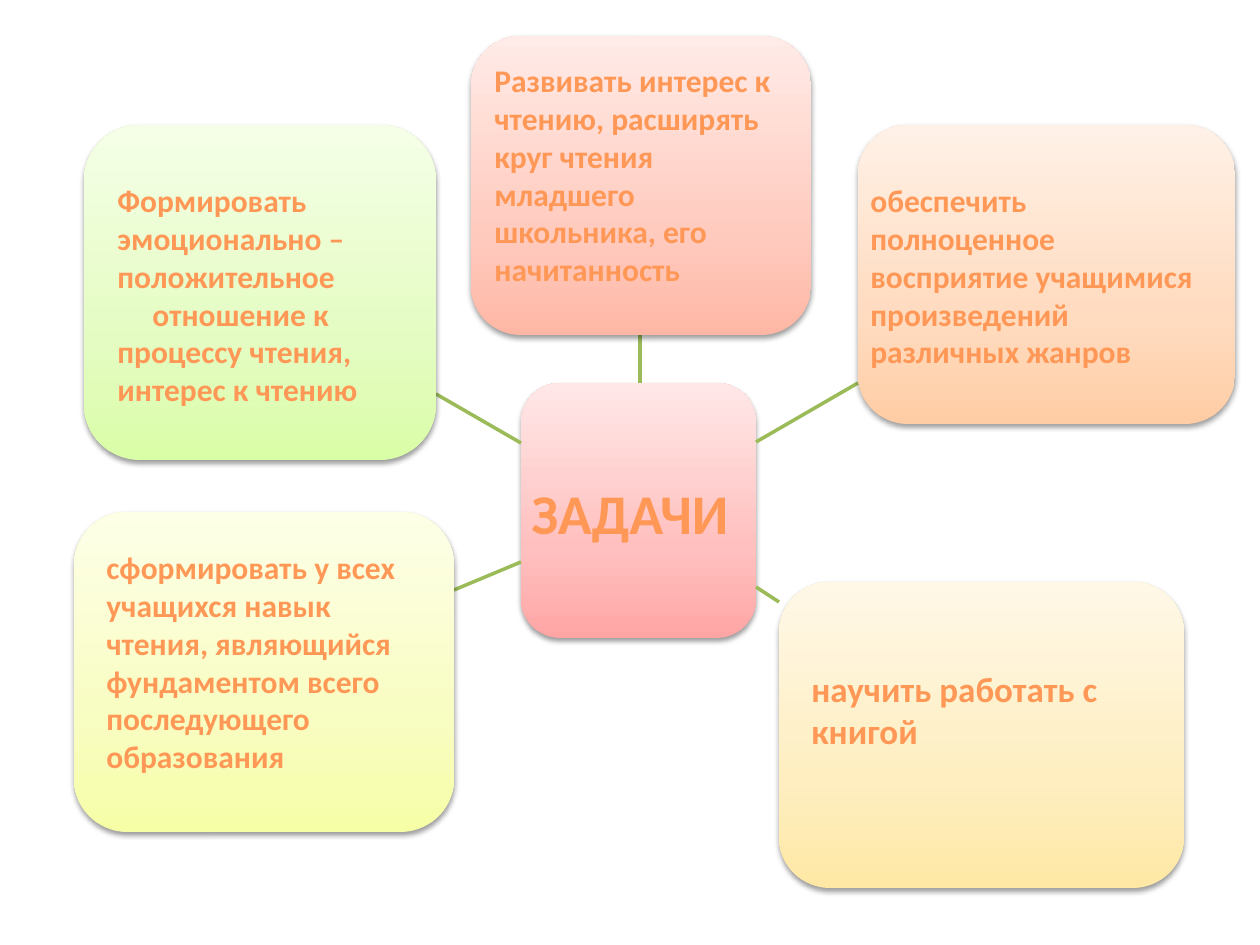
from copy import deepcopy

from lxml.etree import SubElement
from pptx import Presentation
from pptx.dml.color import RGBColor
from pptx.enum.shapes import MSO_CONNECTOR, MSO_SHAPE
from pptx.enum.text import MSO_ANCHOR, MSO_AUTO_SIZE, PP_ALIGN
from pptx.oxml.ns import qn
from pptx.util import Pt

SCALE = 914400 / 126
FONT = "Calibri"
ORANGE = RGBColor(0xFF, 0x98, 0x56)
GREEN = RGBColor(0x9B, 0xBB, 0x59)
ROSE = [RGBColor(0xFF, 0xA6, 0xA5), RGBColor(0xFF, 0xC0, 0xBF), RGBColor(0xFF, 0xE7, 0xE7)]
CORAL = [RGBColor(0xFF, 0xB7, 0xA5), RGBColor(0xFF, 0xCB, 0xBF), RGBColor(0xFF, 0xEB, 0xE7)]
PEACH = [RGBColor(0xFF, 0xCD, 0xA5), RGBColor(0xFF, 0xDB, 0xBF), RGBColor(0xFF, 0xF1, 0xE7)]
AMBER = [RGBColor(0xFF, 0xE8, 0xA5), RGBColor(0xFE, 0xEE, 0xC0), RGBColor(0xFF, 0xF8, 0xE7)]
LEMON = [RGBColor(0xF6, 0xFE, 0xA6), RGBColor(0xF8, 0xFD, 0xC1), RGBColor(0xFD, 0xFF, 0xE7)]
LIME = [RGBColor(0xDA, 0xFD, 0xA7), RGBColor(0xE4, 0xFC, 0xC2), RGBColor(0xF5, 0xFF, 0xE7)]

CENTER = (521, 383, 235, 255)
GOALS = [
    (CORAL, (471, 36, 340, 299), (640, 383, 640, 335), (482, 55, 317, 271), 18,
     ["Развивать интерес к чтению, расширять круг чтения младшего школьника, его начитанность"]),
    (PEACH, (858, 125, 377, 299), (756, 442, 858, 383), (858, 175, 367, 204), 18,
     ["обеспечить полноценное восприятие учащимися произведений различных жанров"]),
    (AMBER, (779, 582, 405, 306), (756, 587, 779, 602), (799, 661, 367, 97), 20,
     ["научить работать с книгой"]),
    (LEMON, (74, 512, 380, 320), (521, 562, 454, 590), (94, 542, 328, 242), 18,
     ["сформировать у всех учащихся навык чтения, являющийся фундаментом всего "
      "последующего образования"]),
    (LIME, (84, 125, 352, 335), (521, 443, 436, 394), (105, 175, 317, 242), 18,
     ["Формировать эмоционально –положительное",
      "отношение к процессу чтения, интерес к чтению"]),
]


def px(*lengths):
    return [round(length * SCALE) for length in lengths]


class MindMap:
    """Draws the cards, links and texts of a mind map on one slide."""

    def __init__(self, deck):
        self.page = deck.slides.add_slide(deck.slide_layouts[5])
        self.shapes = self.page.shapes

    def card(self, place, colors):
        card = self.shapes.add_shape(MSO_SHAPE.ROUNDED_RECTANGLE, *px(*place))
        card.line.fill.background()
        card.fill.gradient()
        card.fill.gradient_angle = 90
        first = card._element.spPr.find(".//" + qn("a:gs"))
        first.addnext(deepcopy(first))
        for stop, position, color in zip(card.fill.gradient_stops, (0, 0.35, 1), colors):
            stop.position = position
            stop.color.rgb = color
        card.shadow.inherit = False
        effects = card._element.spPr.find(qn("a:effectLst"))
        shadow = SubElement(effects, qn("a:outerShdw"), blurRad="40000", dist="20000",
                            dir="5400000", rotWithShape="0")
        black = SubElement(shadow, qn("a:srgbClr"), val="000000")
        SubElement(black, qn("a:alpha"), val="38000")

    def link(self, ends):
        link = self.shapes.add_connector(MSO_CONNECTOR.STRAIGHT, *px(*ends))
        link.line.color.rgb = GREEN
        link.line.width = Pt(2)
        SubElement(link._element.spPr, qn("a:effectLst"))

    def fill_text(self, box, lines, size, align):
        frame = box.text_frame
        frame.word_wrap = True
        frame.auto_size = MSO_AUTO_SIZE.NONE
        frame.vertical_anchor = MSO_ANCHOR.TOP
        frame.text = "\n".join(lines)
        for para in frame.paragraphs:
            para.alignment = align
            para.font.name = FONT
            para.font.size = Pt(size)
            para.font.bold = True
            para.font.color.rgb = ORANGE
        for para in frame.paragraphs[1:]:
            para._p.get_or_add_pPr().set("indent", str(px(35)[0]))

    def text(self, place, lines, size):
        self.fill_text(self.shapes.add_textbox(*px(*place)), lines, size, PP_ALIGN.LEFT)

    def title(self, place, words, size):
        title = self.shapes.title
        title.left, title.top, title.width, title.height = px(*place)
        self.fill_text(title, [words], size, PP_ALIGN.CENTER)
        self.shapes._spTree.append(title._element)


def main():
    deck = Presentation()
    deck.slide_width, deck.slide_height = px(1260, 945)
    mind_map = MindMap(deck)
    mind_map.card(CENTER, ROSE)
    for colors, place, ends, _, _, _ in GOALS:
        mind_map.link(ends)
        mind_map.card(place, colors)
    mind_map.title((518, 472, 224, 81), "ЗАДАЧИ", 32)
    for _, _, _, place, size, lines in GOALS:
        mind_map.text(place, lines, size)
    deck.save("out.pptx")


if __name__ == "__main__":
    main()
